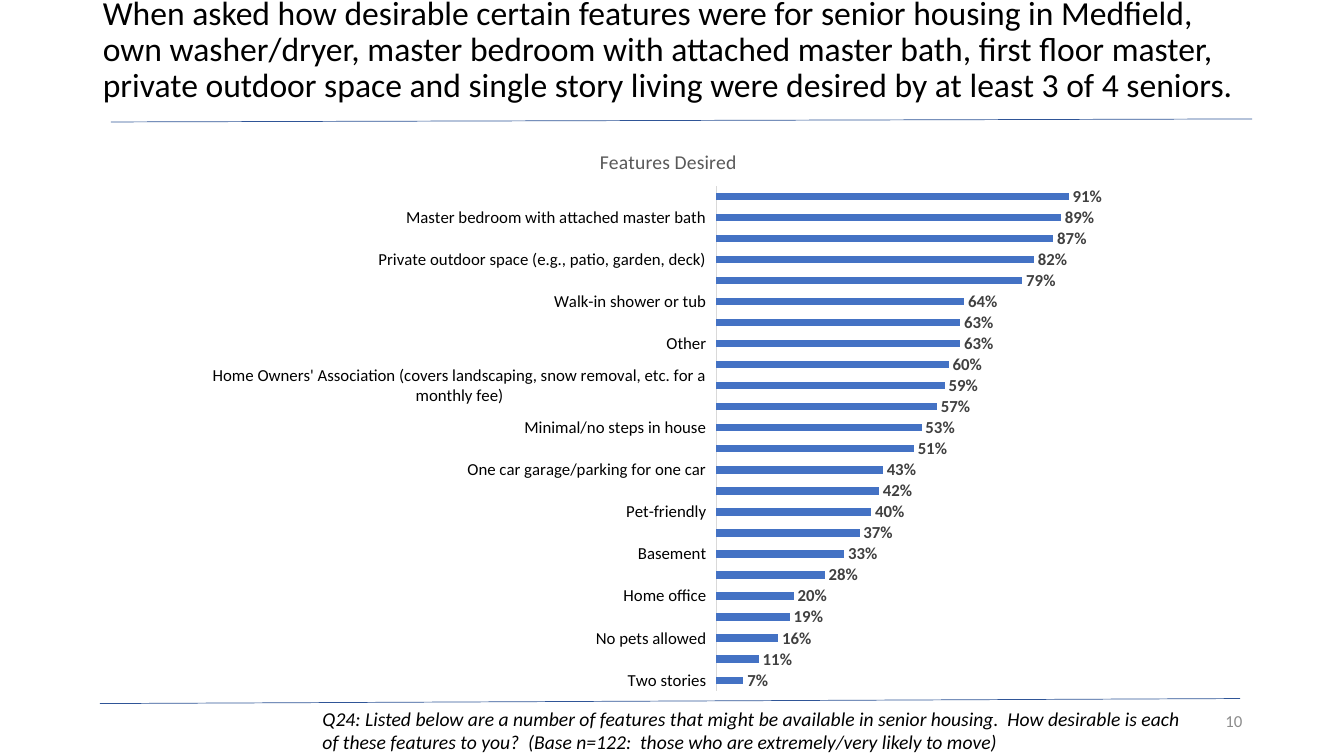
from lxml import etree
from pptx import Presentation
from pptx.chart.data import CategoryChartData
from pptx.dml.color import RGBColor
from pptx.enum.chart import XL_CHART_TYPE, XL_LABEL_POSITION, XL_TICK_LABEL_POSITION, XL_TICK_MARK
from pptx.enum.shapes import MSO_CONNECTOR
from pptx.enum.text import MSO_ANCHOR, MSO_AUTO_SIZE, PP_ALIGN
from pptx.oxml.ns import qn
from pptx.util import Inches, Pt

BAR = XL_CHART_TYPE.BAR_CLUSTERED
OUTSIDE = XL_LABEL_POSITION.OUTSIDE_END
LOW = XL_TICK_LABEL_POSITION.LOW
NO_TICK = XL_TICK_MARK.NONE
STRAIGHT = MSO_CONNECTOR.STRAIGHT
TOP, MIDDLE = MSO_ANCHOR.TOP, MSO_ANCHOR.MIDDLE
LEFT, RIGHT = PP_ALIGN.LEFT, PP_ALIGN.RIGHT
NO_FIT = MSO_AUTO_SIZE.NONE

HEADLINE = (
    "When asked how desirable certain features were for senior housing in Medfield, "
    "own washer/dryer, master bedroom with attached master bath, first floor master, "
    "private outdoor space and single story living were desired by at least 3 of 4 seniors."
)
QUESTION = (
    "Q24: Listed below are a number of features that might be available in senior housing.  "
    "How desirable is each of these features to you?  "
    "(Base n=122:  those who are extremely/very likely to move)"
)
FEATURES = [
    ("Two stories", 0.07),
    ("Not age restricted", 0.11),
    ("No pets allowed", 0.16),
    ("Dining room", 0.19),
    ("Home office", 0.20),
    ("Handicapped-accessible", 0.28),
    ("Basement", 0.33),
    ("Storage space other than basement", 0.37),
    ("Pet-friendly", 0.40),
    ("Community center/meeting space", 0.42),
    ("One car garage/parking for one car", 0.43),
    ("55+ age restricted", 0.51),
    ("Minimal/no steps in house", 0.53),
    ("Two car garage/parking for two cars", 0.57),
    ("Home Owners' Association (covers landscaping, snow removal, etc. for a monthly fee)", 0.59),
    ("Safety features (e.g., grab bars in bathroom)", 0.60),
    ("Other", 0.63),
    ("Walking paths/common garden/other common outdoor space", 0.63),
    ("Walk-in shower or tub", 0.64),
    ("Single story", 0.79),
    ("Private outdoor space (e.g., patio, garden, deck)", 0.82),
    ("First floor master bedroom", 0.87),
    ("Master bedroom with attached master bath", 0.89),
    ("Own washer/dryer", 0.91),
]


def color(value):
    return RGBColor.from_string(value)


def style_font(font, size, fill="000000", bold=False, italic=False):
    font.name = "Calibri"
    font.size = Pt(size)
    font.bold = bold
    font.italic = italic
    font.color.rgb = color(fill)


def write(frame, text, align=LEFT, anchor=TOP, spacing=1.0, **font):
    frame.word_wrap = True
    frame.auto_size = NO_FIT
    frame.vertical_anchor = anchor
    para = frame.paragraphs[0]
    para.alignment = align
    para.line_spacing = spacing
    span = para.add_run()
    span.text = text
    style_font(span.font, **font)


def place(part, index, **settings):
    """Fix a chart part at fractions of the chart area; index is the layout's place among its children."""
    layout = part.find(qn("c:layout"))
    if layout is None:
        layout = etree.Element(qn("c:layout"))
        part.insert(index, layout)
    manual = etree.SubElement(layout, qn("c:manualLayout"))
    for name, value in settings.items():
        etree.SubElement(manual, qn("c:" + name)).set("val", str(value))


class SurveyPage:
    def __init__(self, deck):
        self.page = deck.slides.add_slide(deck.slide_layouts[5])
        self.rule_color = "2F5597"
        self.bar_color = "4472C4"

    def title(self, text, left, top, width, height):
        box = self.page.shapes.title
        box.left, box.top = Inches(left), Inches(top)
        box.width, box.height = Inches(width), Inches(height)
        box.text_frame.margin_bottom = Inches(0.67)
        write(box.text_frame, text, anchor=MIDDLE, spacing=0.9, size=24)

    def text(self, text, left, top, width, height, **style):
        box = self.page.shapes.add_textbox(
            Inches(left), Inches(top), Inches(width), Inches(height))
        write(box.text_frame, text, **style)

    def rule(self, x1, y1, x2, y2):
        line = self.page.shapes.add_connector(
            STRAIGHT, Inches(x1), Inches(y1), Inches(x2), Inches(y2))
        line.line.color.rgb = color(self.rule_color)
        line.line.width = Pt(0.5)
        etree.SubElement(line._element.spPr, qn("a:effectLst"))

    def bar_chart(self, heading, rows, left, top, width, height):
        data = CategoryChartData(number_format="0%")
        data.categories = [name for name, share in rows]
        data.add_series("Series 1", [share for name, share in rows])
        chart = self.page.shapes.add_chart(
            BAR, Inches(left), Inches(top), Inches(width), Inches(height), data).chart
        style_font(chart.font, 10)
        chart.has_legend = False

        chart.has_title = True
        write(chart.chart_title.text_frame, heading, size=14, fill="595959")
        place(chart.chart_title._element, 1, xMode="edge", yMode="edge", x=0.43, y=0.04)

        names = chart.category_axis
        names.major_tick_mark = names.minor_tick_mark = NO_TICK
        names.tick_label_position = LOW
        names.has_major_gridlines = False
        names.format.line.color.rgb = color("D9D9D9")
        names.format.line.width = Pt(0.75)
        style_font(names.tick_labels.font, 12)

        shares = chart.value_axis
        shares.visible = False
        shares.has_major_gridlines = False
        shares.minimum_scale, shares.maximum_scale = 0, 1
        shares.tick_labels.number_format = "0%"
        shares.tick_labels.number_format_is_linked = False

        plot = chart.plots[0]
        plot.gap_width = 182
        plot.vary_by_categories = False
        fill = plot.series[0].format.fill
        fill.solid()
        fill.fore_color.rgb = color(self.bar_color)
        plot.has_data_labels = True
        labels = plot.data_labels
        labels.show_value = True
        labels.position = OUTSIDE
        labels.number_format = "0%"
        labels.number_format_is_linked = False
        style_font(labels.font, 12, "404040", bold=True)
        plot_area = chart._chartSpace.find(".//" + qn("c:plotArea"))
        place(plot_area, 0, layoutTarget="inner", xMode="edge", yMode="edge",
              x=0.56, y=0.11, w=0.42, h=0.87)


def main():
    deck = Presentation()
    deck.slide_width, deck.slide_height = Inches(13.33), Inches(7.5)
    survey = SurveyPage(deck)
    survey.title(HEADLINE, 0.92, 0.4, 11.5, 0.82)
    survey.rule(0.99, 6.98, 12.3, 6.93)
    survey.rule(1.1, 1.21, 12.42, 1.18)
    survey.text("10", 9.42, 6.95, 3, 0.4, align=RIGHT, anchor=MIDDLE, size=12, fill="8C8C8C")
    survey.text(QUESTION, 3.1, 6.96, 8.75, 0.57, size=14, italic=True)
    survey.bar_chart("Features Desired", FEATURES, 1.98, 1.21, 9.15, 5.76)
    deck.save("out.pptx")


if __name__ == "__main__":
    main()
